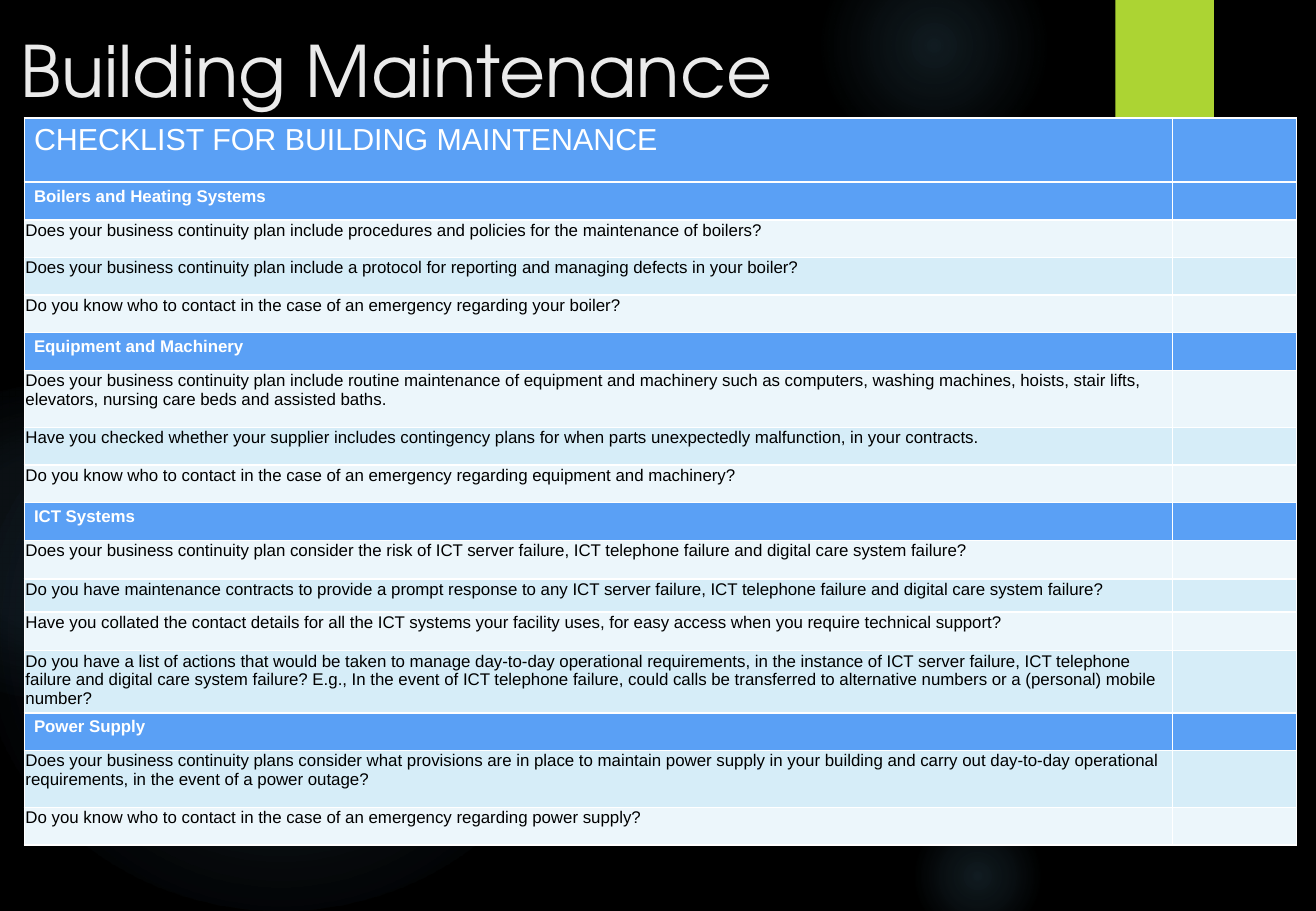
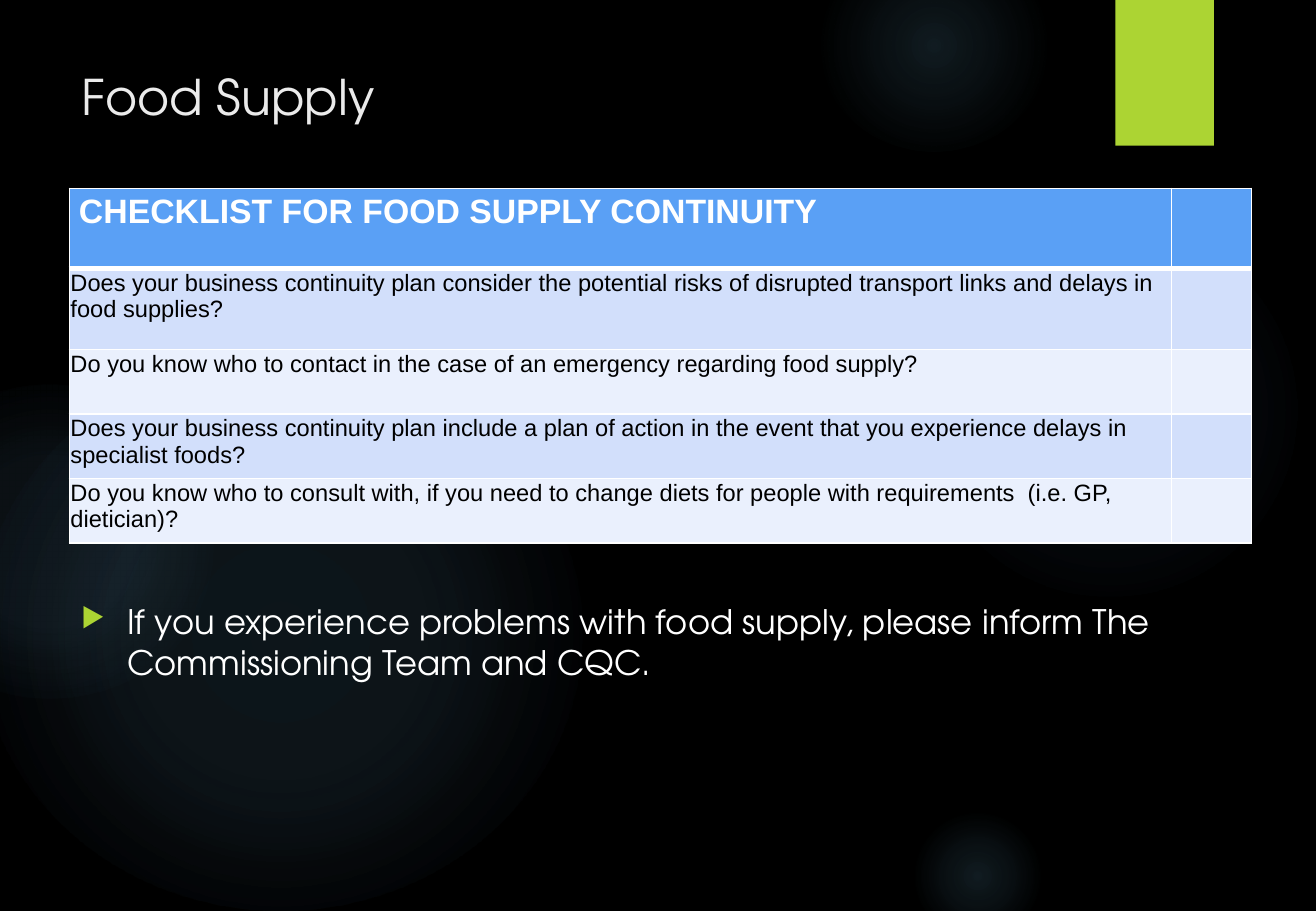
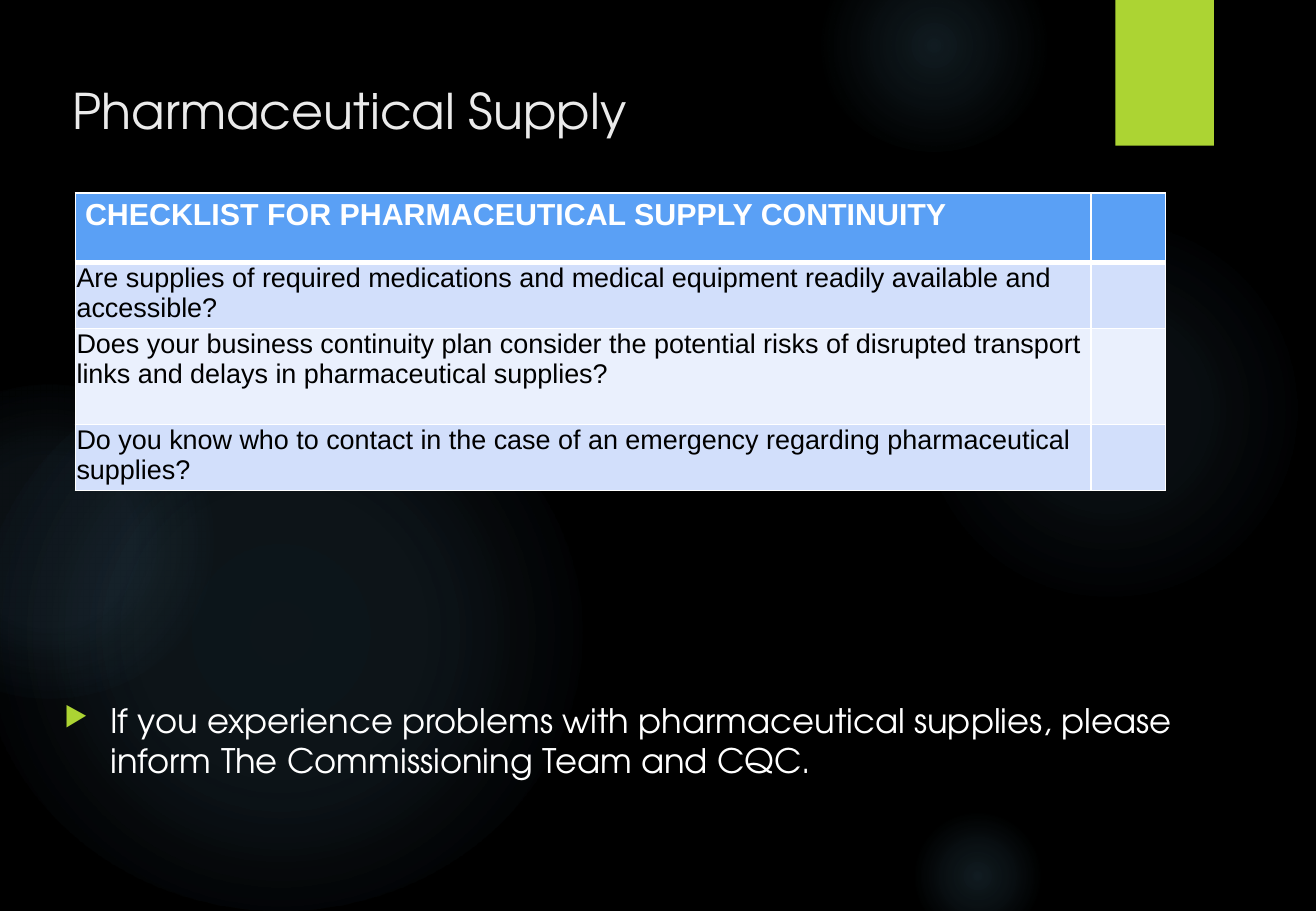
from dataclasses import dataclass

from lxml import etree
from pptx import Presentation
from pptx.dml.color import RGBColor
from pptx.enum.shapes import MSO_SHAPE
from pptx.enum.text import MSO_ANCHOR
from pptx.oxml import parse_xml
from pptx.oxml.ns import nsdecls, qn
from pptx.util import Pt

RECT, OVAL = MSO_SHAPE.RECTANGLE, MSO_SHAPE.OVAL
TOP = MSO_ANCHOR.TOP
PX = 9144  # 100 px to the inch


@dataclass(frozen=True)
class Theme:
    back: str = "000000"
    glow: str = "7AC4F0"
    accent: str = "ACD433"
    title: str = "EBEBEB"
    white: str = "FFFFFF"
    ink: str = "000000"
    heading: str = "5AA0F5"
    aqua: tuple = ("ECF6FB", "D6EDF8")
    blue: tuple = ("EAF0FD", "D2DFFB")
    display: str = "TeX Gyre Adventor"
    text: str = "Arial"
    title_size: float = 29.1
    big_title_size: float = 42
    note_size: float = 20
    section_size: float = 10


T = Theme()

# left, top, width, height, then (position %, opacity %) of each stop
GLOWS = [
    ((746, 183, 334, 308), ((0, 7), (36, 6), (69, 0))),
    ((674, -50, 190, 175), ((0, 14), (36, 7), (73, 0))),
    ((746, 667, 117, 108), ((0, 14), (36, 7), (66, 0))),
    ((-18, 292, 497, 458), ((0, 11), (36, 10), (75, 0))),
    ((-99, 317, 280, 258), ((0, 8), (36, 8), (72, 0))),
]
TAB = (918, 0, 81, 120)

HEAD, SECTION, ITEM = "head", "section", "item"

SLIDES = [
    dict(
        title="Building Maintenance", title_box=(7, 17, 836, 124),
        title_size=T.big_title_size,
        table_at=(20, 97), cols=(945, 102), bands=T.aqua,
        head_size=18, head_bold=False, head_rule=1, item_size=10,
        rows=[
            (HEAD, 53, "CHECKLIST FOR BUILDING MAINTENANCE"),
            (SECTION, 31, "Boilers and Heating Systems"),
            (ITEM, 31, "Does your business continuity plan include procedures and "
                       "policies for the maintenance of boilers?"),
            (ITEM, 31, "Does your business continuity plan include a protocol for "
                       "reporting and managing defects in your boiler?"),
            (ITEM, 31, "Do you know who to contact in the case of an emergency "
                       "regarding your boiler?"),
            (SECTION, 31, "Equipment and Machinery"),
            (ITEM, 47, "Does your business continuity plan include routine maintenance "
                       "of equipment and machinery such as computers, washing machines, "
                       "hoists, stair lifts, elevators, nursing care beds and assisted "
                       "baths."),
            (ITEM, 31, "Have you checked whether your supplier includes contingency "
                       "plans for when parts unexpectedly malfunction, in your "
                       "contracts."),
            (ITEM, 31, "Do you know who to contact in the case of an emergency "
                       "regarding equipment and machinery?"),
            (SECTION, 31, "ICT Systems"),
            (ITEM, 32, "Does your business continuity plan consider the risk of ICT "
                       "server failure, ICT telephone failure and digital care system "
                       "failure?"),
            (ITEM, 27, "Do you have maintenance contracts to provide a prompt response "
                       "to any ICT server failure, ICT telephone failure and digital "
                       "care system failure?"),
            (ITEM, 32, "Have you collated the contact details for all the ICT systems "
                       "your facility uses, for easy access when you require technical "
                       "support?"),
            (ITEM, 47, "Do you have a list of actions that would be taken to manage "
                       "day-to-day operational requirements, in the instance of ICT "
                       "server failure, ICT telephone failure and digital care system "
                       "failure? E.g., In the event of ICT telephone failure, could "
                       "calls be transferred to alternative numbers or a (personal) "
                       "mobile number?"),
            (SECTION, 31, "Power Supply"),
            (ITEM, 47, "Does your business continuity plans consider what provisions "
                       "are in place to maintain power supply in your building and "
                       "carry out day-to-day operational requirements, in the event of "
                       "a power outage?"),
            (ITEM, 31, "Do you know who to contact in the case of an emergency "
                       "regarding power supply?"),
        ],
    ),
    dict(
        title="Food Supply", title_box=(57, 50, 836, 153), title_size=T.title_size,
        table_at=(57, 155), cols=(907, 66), bands=T.blue,
        head_size=20, head_bold=True, head_rule=3, item_size=14,
        rows=[
            (HEAD, 66, "CHECKLIST FOR FOOD SUPPLY CONTINUITY"),
            (ITEM, 67, "Does your business continuity plan consider the potential "
                       "risks of disrupted transport links and delays in food "
                       "supplies?"),
            (ITEM, 53, "Do you know who to contact in the case of an emergency "
                       "regarding food supply?"),
            (ITEM, 53, "Does your business continuity plan include a plan of action in "
                       "the event that you experience delays in specialist foods?"),
            (ITEM, 53, "Do you know who to consult with, if you need to change diets "
                       "for people with requirements  (i.e. GP, dietician)?"),
        ],
        note="If you experience problems with food supply, please inform The "
             "Commissioning Team and CQC.",
        note_box=(57, 490, 984, 230),
    ),
    dict(
        title="Pharmaceutical Supply", title_box=(50, 61, 836, 124),
        title_size=T.title_size,
        table_at=(62, 159), cols=(836, 61), bands=T.blue,
        head_size=18, head_bold=True, head_rule=3, item_size=16,
        rows=[
            (HEAD, 57, "CHECKLIST FOR PHARMACEUTICAL SUPPLY CONTINUITY"),
            (ITEM, 50, "Are supplies of required medications and medical equipment "
                       "readily available and accessible?"),
            (ITEM, 79, "Does your business continuity plan consider the potential "
                       "risks of disrupted transport links and delays in "
                       "pharmaceutical supplies?"),
            (ITEM, 50, "Do you know who to contact in the case of an emergency "
                       "regarding pharmaceutical supplies?"),
        ],
        note="If you experience problems with pharmaceutical supplies, please inform "
             "The Commissioning Team and CQC.",
        note_box=(43, 571, 970, 104),
    ),
]


def px(values):
    return [v * PX for v in values]


def add_run(p, text, font, size, color, bold=False):
    r = p.add_run()
    r.text = text
    r.font.name, r.font.size, r.font.bold = font, Pt(size), bold
    r.font.color.rgb = RGBColor.from_string(color)


prs = Presentation()
prs.slide_width, prs.slide_height = px((1083, 750))
back = prs.slide_master.background.fill
back.solid()
back.fore_color.rgb = RGBColor.from_string(T.back)

for page in SLIDES:
    s = prs.slides.add_slide(prs.slide_layouts[6])

    # Glows and accent tab
    for box, stops in GLOWS:
        sp = s.shapes.add_shape(OVAL, *px(box))
        sp.shadow.inherit = False
        sp.line.fill.background()
        gs = "".join(
            f'<a:gs pos="{pos * 1000}"><a:srgbClr val="{T.glow}">'
            f'<a:alpha val="{alpha * 1000}"/></a:srgbClr></a:gs>'
            for pos, alpha in stops)
        sp._element.spPr.find(qn("a:prstGeom")).addnext(parse_xml(
            f'<a:gradFill {nsdecls("a")} rotWithShape="1"><a:gsLst>{gs}</a:gsLst>'
            '<a:path path="circle"><a:fillToRect l="50000" t="50000" r="50000" '
            'b="50000"/></a:path></a:gradFill>'))
    tab = s.shapes.add_shape(RECT, *px(TAB))
    tab.shadow.inherit = False
    tab.line.fill.background()
    tab.fill.solid()
    tab.fill.fore_color.rgb = RGBColor.from_string(T.accent)

    # Title
    tf = s.shapes.add_textbox(*px(page["title_box"])).text_frame
    tf.word_wrap, tf.vertical_anchor = True, TOP
    add_run(tf.paragraphs[0], page["title"], T.display, page["title_size"], T.title)

    # Bulleted note
    if "note" in page:
        tf = s.shapes.add_textbox(*px(page["note_box"])).text_frame
        tf.word_wrap, tf.vertical_anchor = True, TOP
        p = tf.paragraphs[0]
        pPr = p._p.get_or_add_pPr()
        pPr.set("marL", str(38 * PX))
        pPr.set("indent", str(-38 * PX))
        color = etree.SubElement(pPr, qn("a:buClr"))
        etree.SubElement(color, qn("a:srgbClr"), val=T.accent)
        etree.SubElement(pPr, qn("a:buSzPct"), val="80000")
        etree.SubElement(pPr, qn("a:buChar"), char="▶")
        add_run(p, page["note"], T.display, T.note_size, T.white)

    # Checklist
    rows, cols = page["rows"], page["cols"]
    size = (sum(cols), sum(height for _, height, _ in rows))
    table = s.shapes.add_table(len(rows), len(cols),
                               *px(page["table_at"] + size)).table
    table.first_row = table.horz_banding = False
    for col, width in zip(table.columns, cols):
        col.width = width * PX
    styles = {
        HEAD: (page["head_size"], T.white, page["head_bold"], (8, 4, 8, 4)),
        SECTION: (T.section_size, T.white, True, (8, 4, 8, 4)),
        ITEM: (page["item_size"], T.ink, False, (1, 1, 1, 0)),
    }
    for i, (kind, height, text) in enumerate(rows):
        table.rows[i].height = height * PX
        pt, color, bold, insets = styles[kind]
        fill = page["bands"][i % 2] if kind == ITEM else T.heading
        rules = {"lnL": 1, "lnR": 1,
                 "lnT": page["head_rule"] if i == 1 else 1,
                 "lnB": page["head_rule"] if i == 0 else 1}
        for j, cell in enumerate(table.rows[i].cells):
            (cell.margin_left, cell.margin_top,
             cell.margin_right, cell.margin_bottom) = px(insets)
            tcPr = cell._tc.get_or_add_tcPr()
            for side, width in rules.items():
                ln = etree.SubElement(tcPr, qn(f"a:{side}"), w=str(Pt(width)))
                solid = etree.SubElement(ln, qn("a:solidFill"))
                etree.SubElement(solid, qn("a:srgbClr"), val=T.white)
            cell.fill.solid()
            cell.fill.fore_color.rgb = RGBColor.from_string(fill)
            p = cell.text_frame.paragraphs[0]
            if j == 0:
                add_run(p, text, T.text, pt, color, bold)
            else:
                etree.SubElement(p._p, qn("a:endParaRPr"), sz=str(pt * 100))

prs.save("out.pptx")
